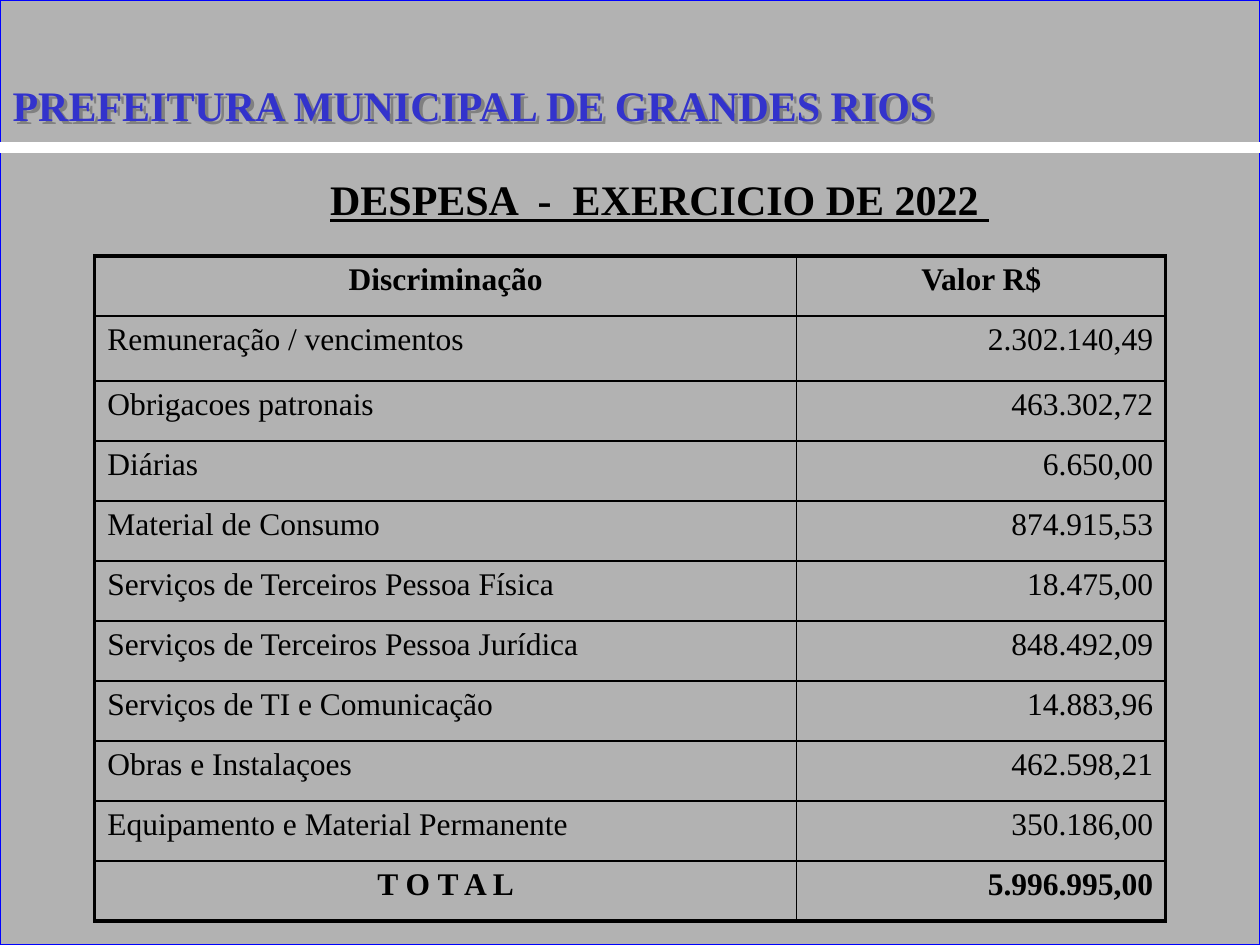
from lxml import etree
from pptx import Presentation
from pptx.dml.color import RGBColor
from pptx.enum.shapes import MSO_CONNECTOR, MSO_SHAPE
from pptx.enum.text import MSO_ANCHOR, MSO_AUTO_SIZE, PP_ALIGN
from pptx.oxml.ns import qn
from pptx.util import Cm, Pt

LEFT, CENTER, RIGHT = PP_ALIGN.LEFT, PP_ALIGN.CENTER, PP_ALIGN.RIGHT
FONT = "Times New Roman"
COLORS = {"background": "B2B2B2", "frame": "0000FF", "rule": "FFFFFF",
          "title": "3333CC", "text": "000000", "shadow": "808080"}

# Content
TITLE = "PREFEITURA MUNICIPAL DE GRANDES RIOS"
SUBTITLE = "DESPESA  -  EXERCICIO DE 2022 "
ROWS = [
    ("Discriminação", "Valor R$"),
    ("Remuneração / vencimentos", "2.302.140,49"),
    ("Obrigacoes patronais", "463.302,72"),
    ("Diárias", "6.650,00"),
    ("Material de Consumo", "874.915,53"),
    ("Serviços de Terceiros Pessoa Física", "18.475,00"),
    ("Serviços de Terceiros Pessoa Jurídica", "848.492,09"),
    ("Serviços de TI e Comunicação", "14.883,96"),
    ("Obras e Instalaçoes", "462.598,21"),
    ("Equipamento e Material Permanente", "350.186,00"),
    ("T O T A L", "5.996.995,00"),
]
COL_WIDTHS = (Cm(14.15), Cm(7.44))
ROW_HEIGHT, FIRST_ITEM_HEIGHT = Cm(1.21), Cm(1.31)
OUTER, INNER = Pt(2.25), Pt(1)


def rgb(name):
    return RGBColor.from_string(COLORS[name])


def write(tf, text, size, color, align, before, bold=True, underline=None):
    """Fill a text frame; before is the space above in percent of a line."""
    tf.text = text
    p = tf.paragraphs[0]
    p.alignment = align
    spacing = etree.Element(qn("a:spcBef"))
    etree.SubElement(spacing, qn("a:spcPct"), val=str(before * 1000))
    p._p.get_or_add_pPr().insert(0, spacing)
    font = p.runs[0].font
    font.name, font.size, font.bold, font.underline = FONT, Pt(size), bold, underline
    font.color.rgb = rgb(color)


def place(shape, left, top, width, height):
    shape.left, shape.top, shape.width, shape.height = map(Cm, (left, top, width, height))
    tf = shape.text_frame
    tf.word_wrap = True
    tf.vertical_anchor = MSO_ANCHOR.TOP
    tf.auto_size = MSO_AUTO_SIZE.SHAPE_TO_FIT_TEXT
    return tf


def add_border(cell, side, width):
    ln = etree.SubElement(cell._tc.get_or_add_tcPr(), qn("a:ln" + side), w=str(width))
    fill = etree.SubElement(ln, qn("a:solidFill"))
    etree.SubElement(fill, qn("a:srgbClr"), val=COLORS["text"])


prs = Presentation()
prs.slide_width, prs.slide_height = Cm(25.4), Cm(19.05)
s = prs.slides.add_slide(prs.slide_layouts[5])
title = s.shapes.title

# Background panel, behind the title
panel = s.shapes.add_shape(MSO_SHAPE.RECTANGLE, 0, 0, prs.slide_width, prs.slide_height)
panel.shadow.inherit = False
panel.fill.solid()
panel.fill.fore_color.rgb = rgb("background")
panel.line.color.rgb = rgb("frame")
panel.line.width = Pt(0.75)
title._element.addprevious(panel._element)

# White rule under the title
rule = s.shapes.add_connector(MSO_CONNECTOR.STRAIGHT, 0, Cm(2.97), prs.slide_width, Cm(2.97))
rule.line.color.rgb = rgb("rule")
rule.line.width = Pt(6)
etree.SubElement(rule._element.spPr, qn("a:effectLst"))

# Title with a text shadow
write(place(title, 0, 1.47, 20.9, 1.27), TITLE, 24, "title", LEFT, 50)
title.fill.background()
effects = etree.SubElement(title._element.spPr, qn("a:effectLst"))
shadow = etree.SubElement(effects, qn("a:outerShdw"), dist="35921", dir="2700000")
etree.SubElement(shadow, qn("a:srgbClr"), val=COLORS["shadow"])

# Subtitle
subtitle = s.shapes.add_textbox(0, 0, 0, 0)
write(place(subtitle, 3.5, 3.38, 19.6, 2.82), SUBTITLE, 24, "text", CENTER, 50, underline=True)

# Expense table
last_row, last_col = len(ROWS) - 1, len(COL_WIDTHS) - 1
heights = [FIRST_ITEM_HEIGHT if i == 1 else ROW_HEIGHT for i in range(len(ROWS))]
table = s.shapes.add_table(len(ROWS), len(COL_WIDTHS), Cm(1.91), Cm(5.16),
                           sum(COL_WIDTHS), sum(heights)).table
table.first_row = table.horz_banding = False
for column, width in zip(table.columns, COL_WIDTHS):
    column.width = width
for i, values in enumerate(ROWS):
    table.rows[i].height = heights[i]
    for j, value in enumerate(values):
        cell = table.cell(i, j)
        strong = i in (0, last_row)
        if i == 0 or (strong and j == 0):
            align = CENTER
        else:
            align = RIGHT if j else LEFT
        write(cell.text_frame, value, 18, "text", align, 20, bold=strong)
        edges = {"L": j == 0, "R": j == last_col, "T": i == 0, "B": i == last_row}
        for side, is_outer in edges.items():
            add_border(cell, side, OUTER if is_outer else INNER)
        cell.fill.background()

prs.save("out.pptx")
